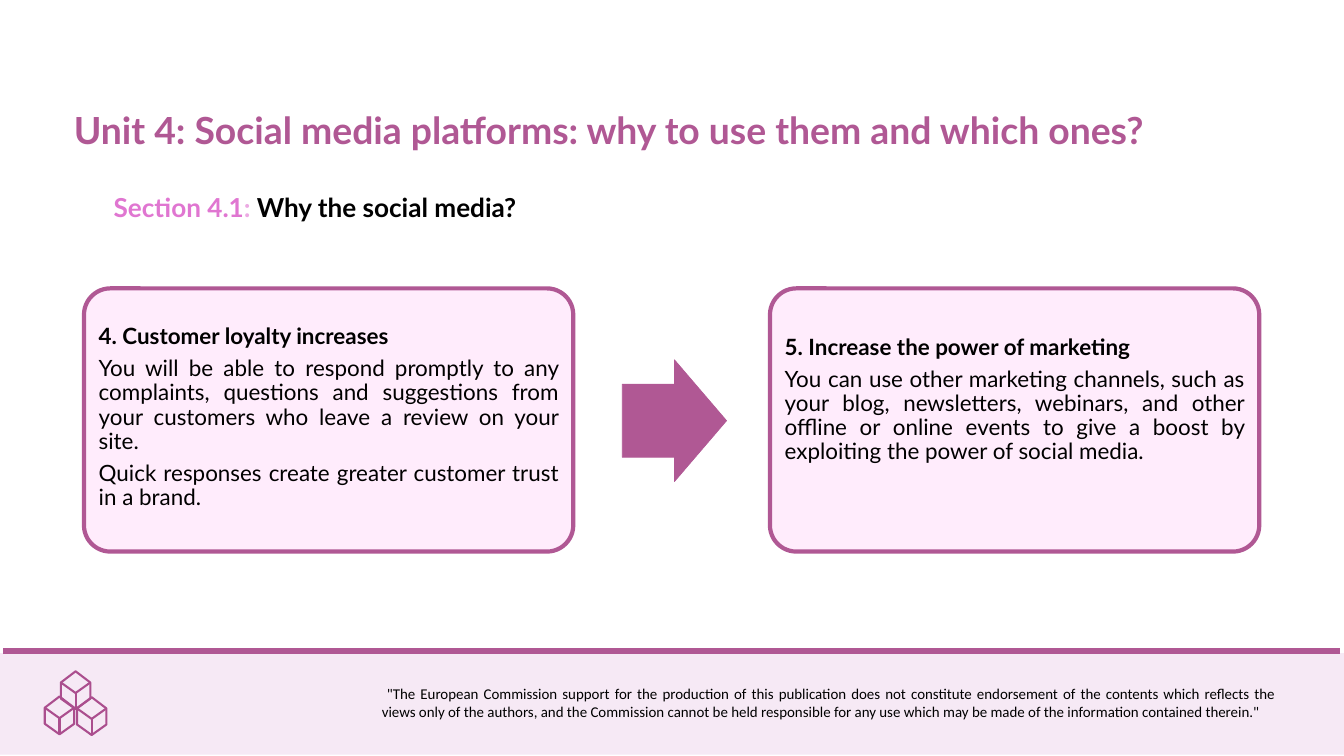
from lxml import etree
from pptx import Presentation
from pptx.dml.color import RGBColor
from pptx.enum.shapes import MSO_CONNECTOR, MSO_SHAPE
from pptx.enum.text import MSO_ANCHOR, PP_ALIGN
from pptx.oxml.ns import qn
from pptx.util import Emu, Pt

PX = 9525
RECT, ROUND, ARROW = MSO_SHAPE.RECTANGLE, MSO_SHAPE.ROUNDED_RECTANGLE, MSO_SHAPE.RIGHT_ARROW
STRAIGHT, MIDDLE = MSO_CONNECTOR.STRAIGHT, MSO_ANCHOR.MIDDLE
LEFT, JUSTIFY = PP_ALIGN.LEFT, PP_ALIGN.JUSTIFY

PLUM = RGBColor(0xB0, 0x58, 0x94)
ICON = RGBColor(0xAB, 0x4E, 0x8E)
PINK = RGBColor(0xE0, 0x76, 0xD1)
PALE_PINK = RGBColor(0xEC, 0xAA, 0xE3)
CARD = RGBColor(0xFF, 0xEC, 0xFC)
BAND = RGBColor(0xF6, 0xE9, 0xF5)
BLACK = RGBColor(0, 0, 0)

DISCLAIMER = (
    " \"The European Commission support for the production of this publication does not "
    "constitute endorsement of the contents which reflects the views only of the authors, "
    "and the Commission cannot be held responsible for any use which may be made of the "
    "information contained therein.\""
)
CARDS = [
    (120, 16, "4. Customer loyalty increases", [
        "You will be able to respond promptly to any complaints, questions and suggestions "
        "from your customers who leave a review on your site.",
        "Quick responses create greater customer trust in a brand.",
    ]),
    (1100, 67, "5. Increase the power of marketing", [
        "You can use other marketing channels, such as your blog, newsletters, webinars, and "
        "other offline or online events to give a boost by exploiting the power of social media.",
    ]),
]
CUBES = [(85, 1022), (108, 986), (131, 1023)]
CUBE_EDGES = [
    [(0, -27), (21, -11), (21, 12), (0, 27), (-21, 12), (-21, -11), (0, -27)],
    [(-21, -11), (0, 4), (21, -11)],
    [(0, 4), (0, 27)],
]


def px(*values):
    """Turn pixel lengths into EMU."""
    return [Emu(v * PX) for v in values]


def add_shape(s, kind, box, fill, line=None, width=0):
    """Add a flat preset shape."""
    sp = s.shapes.add_shape(kind, *px(*box))
    sp.shadow.inherit = False
    sp.fill.solid()
    sp.fill.fore_color.rgb = fill
    if line is None:
        sp.line.fill.background()
    else:
        sp.line.color.rgb = line
        sp.line.width = Pt(width)
    return sp


def style(r, size, color, bold=False, font="Lato"):
    """Format one run."""
    r.font.name = font
    r.font.size = Pt(size)
    r.font.bold = bold
    r.font.color.rgb = color


def add_text(s, box, parts, size, bold=True, font="Lato", align=LEFT):
    """Add a one-paragraph text box made of coloured parts."""
    tf = s.shapes.add_textbox(*px(*box)).text_frame
    tf.word_wrap = True
    p = tf.paragraphs[0]
    p.alignment = align
    for text, color in parts:
        r = p.add_run()
        r.text = text
        style(r, size, color, bold, font)


def add_card(s, left, bottom_inset, heading, body):
    """Add a rounded card with a heading and justified paragraphs."""
    sp = add_shape(s, ROUND, (left, 412, 699, 376), CARD, PLUM, 4.5)
    sp.adjustments[0] = 0.1
    tf = s.shapes.add_textbox(*px(left + 11, 423, 677, 354)).text_frame
    tf.word_wrap = True
    tf.vertical_anchor = MIDDLE
    tf.margin_left, tf.margin_right, tf.margin_top, tf.margin_bottom = px(10, 10, 10, bottom_inset)
    tf.text = "\n".join([heading, *body])
    for i, p in enumerate(tf.paragraphs):
        p.alignment = JUSTIFY
        p.line_spacing = 0.9
        p.space_after = Pt(8.4 if i < len(body) else 0)
        style(p.runs[0], 24, BLACK, bold=i == 0)


def add_rule(s, x1, x2, y):
    """Add the thick line above the footer."""
    line = s.shapes.add_connector(STRAIGHT, *px(x1, y, x2, y))
    line.line.color.rgb = PLUM
    line.line.width = Pt(6.75)
    etree.SubElement(line._element.spPr, qn("a:effectLst"))


def add_cube(s, cx, cy):
    """Add one outlined cube of the footer icon."""
    edges = [[(cx + x, cy + y) for x, y in edge] for edge in CUBE_EDGES]
    fb = s.shapes.build_freeform(*edges[0][0], scale=PX)
    fb.add_line_segments(edges[0][1:], close=False)
    for edge in edges[1:]:
        fb.move_to(*edge[0])
        fb.add_line_segments(edge[1:], close=False)
    sp = fb.convert_to_shape()
    sp.shadow.inherit = False
    sp.fill.background()
    sp.line.color.rgb = ICON
    sp.line.width = Pt(2.25)


def main():
    """Build the slide and save it."""
    prs = Presentation()
    prs.slide_width, prs.slide_height = px(1920, 1080)
    s = prs.slides.add_slide(prs.slide_layouts[6])

    add_shape(s, RECT, (0, 933, 1920, 145), BAND)
    add_rule(s, 5, 1915, 930)
    for cube in CUBES:
        add_cube(s, *cube)
    add_text(s, (536, 974, 1296, 61), [(DISCLAIMER, BLACK)], 16, False, "Calibri", JUSTIFY)

    add_text(s, (96, 149, 1600, 74),
             [("Unit 4: Social media platforms: why to use them and which ones?", PLUM)], 40)
    add_text(s, (153, 268, 1575, 55),
             [("Section 4.1", PINK), (": ", PALE_PINK), ("Why the social media?", BLACK)], 28)

    for card in CARDS:
        add_card(s, *card)
    arrow = add_shape(s, ARROW, (889, 514, 149, 174), PLUM, PLUM, 0.75)
    arrow.adjustments[0] = 0.6
    arrow.adjustments[1] = 0.5
    prs.save("out.pptx")


if __name__ == "__main__":
    main()
